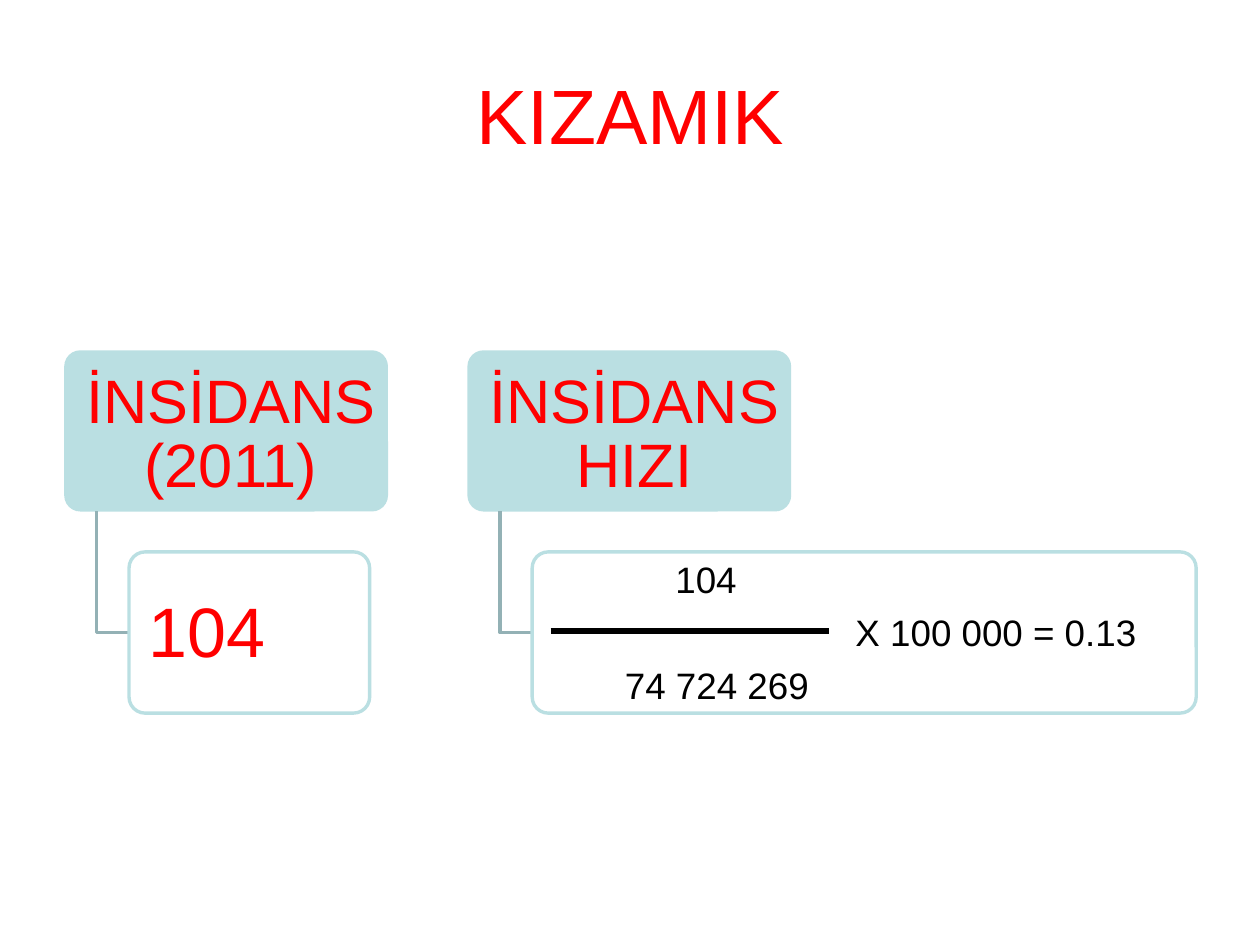
from pptx import Presentation, util as u
from pptx.dml.color import RGBColor
from pptx.enum import shapes, text

COLORS = {"red": "FF0000", "teal": "BADFE2", "branch": "93B1B5",
          "white": "FFFFFF", "black": "000000"}
FONT = "Arial"
TITLE = "KIZAMIK"
GROUPS = [
    {"heading": ["İNSİDANS", "(2011)"], "hanging": 0.46, "detail": "104", "detail_width": 1.91},
    {"heading": ["İNSİDANS", "HIZI"], "hanging": 0.69, "detail": "", "detail_width": 5.27},
]
FORMULA = [
    ("104", 5.35, 4.39, 0.52),
    ("X 100 000 = 0.13", 6.78, 4.81, 2.26),
    ("74 724 269", 4.95, 5.23, 1.49),
]
FRACTION_BAR = (4.37, 6.58, 5.01)

LEFT, TOP, PITCH = 0.51, 2.78, 3.2
HEAD_W, HEAD_H = 2.57, 1.28
BRANCH_X = HEAD_W / 10
DETAIL_X = HEAD_W / 5
DETAIL_Y = TOP + HEAD_H * 1.25


def rgb(name):
    return RGBColor.from_string(COLORS[name])


def add_run(paragraph, words, size, color):
    run = paragraph.add_run()
    run.text = words
    run.font.size = u.Pt(size)
    run.font.name = FONT
    run.font.color.rgb = rgb(color)


def set_frame(frame, insets, anchor, wrap=True):
    (frame.margin_left, frame.margin_top,
     frame.margin_right, frame.margin_bottom) = map(u.Inches, insets)
    frame.vertical_anchor = anchor
    frame.word_wrap = wrap


def add_card(slide, x, y, width, fill, border=None):
    card = slide.shapes.add_shape(shapes.MSO_SHAPE.ROUNDED_RECTANGLE,
                                  *map(u.Inches, (x, y, width, HEAD_H)))
    card.adjustments[0] = 0.1
    card.shadow.inherit = False
    card.fill.solid()
    card.fill.fore_color.rgb = rgb(fill)
    if border:
        card.line.color.rgb = rgb(border)
        card.line.width = u.Pt(1.92)
    else:
        card.line.fill.background()
    return card


def add_path(slide, points, color, width):
    start, *rest = [(u.Inches(x), u.Inches(y)) for x, y in points]
    builder = slide.shapes.build_freeform(*start)
    builder.add_line_segments(rest, close=False)
    path_shape = builder.convert_to_shape()
    path_shape.shadow.inherit = False
    path_shape.fill.background()
    path_shape.line.color.rgb = rgb(color)
    path_shape.line.width = u.Pt(width)


def add_group(slide, index, group):
    x = LEFT + index * PITCH
    heading = add_card(slide, x, TOP, HEAD_W, "teal")
    set_frame(heading.text_frame, (0.13, 0.14, 0, 0), text.MSO_ANCHOR.TOP)
    paragraph = heading.text_frame.paragraphs[0]
    paragraph.alignment = text.PP_ALIGN.LEFT
    paragraph.line_spacing = u.Pt(36.2)
    paragraph.space_before = u.Pt(7)
    properties = paragraph._p.get_or_add_pPr()
    properties.set("marL", str(u.Inches(group["hanging"] + 0.01)))
    properties.set("indent", str(-u.Inches(group["hanging"])))
    first, second = group["heading"]
    add_run(paragraph, first, 35, "red")
    paragraph.add_line_break()
    add_run(paragraph, second, 35, "red")

    middle = DETAIL_Y + HEAD_H / 2
    add_path(slide, [(x + BRANCH_X, TOP + HEAD_H), (x + BRANCH_X, middle),
                     (x + DETAIL_X, middle)], "branch", 1.92)
    detail = add_card(slide, x + DETAIL_X, DETAIL_Y, group["detail_width"], "white", "teal")
    if group["detail"]:
        set_frame(detail.text_frame, (0.12, 0, 0, 0.05), text.MSO_ANCHOR.MIDDLE)
        paragraph = detail.text_frame.paragraphs[0]
        paragraph.alignment = text.PP_ALIGN.LEFT
        add_run(paragraph, group["detail"], 40, "red")


def main():
    prs = Presentation()
    prs.slide_width, prs.slide_height = u.Inches(10), u.Inches(7.5)
    slide = prs.slides.add_slide(prs.slide_layouts[5])

    title = slide.shapes.title
    title.left, title.top, title.width, title.height = map(u.Inches, (3.77, 0.53, 2.47, 0.76))
    set_frame(title.text_frame, (0, 0.01, 0, 0), text.MSO_ANCHOR.TOP, wrap=False)
    add_run(title.text_frame.paragraphs[0], TITLE, 44, "red")

    for index, group in enumerate(GROUPS):
        add_group(slide, index, group)

    for words, x, y, width in FORMULA:
        term = slide.shapes.add_textbox(*map(u.Inches, (x, y, width, 0.38)))
        set_frame(term.text_frame, (0.01, 0.03, 0, 0), text.MSO_ANCHOR.TOP, wrap=False)
        add_run(term.text_frame.paragraphs[0], words, 21, "black")

    bar_start, bar_end, bar_y = FRACTION_BAR
    add_path(slide, [(bar_start, bar_y), (bar_end, bar_y)], "black", 3.12)
    prs.save("out.pptx")


if __name__ == "__main__":
    main()
